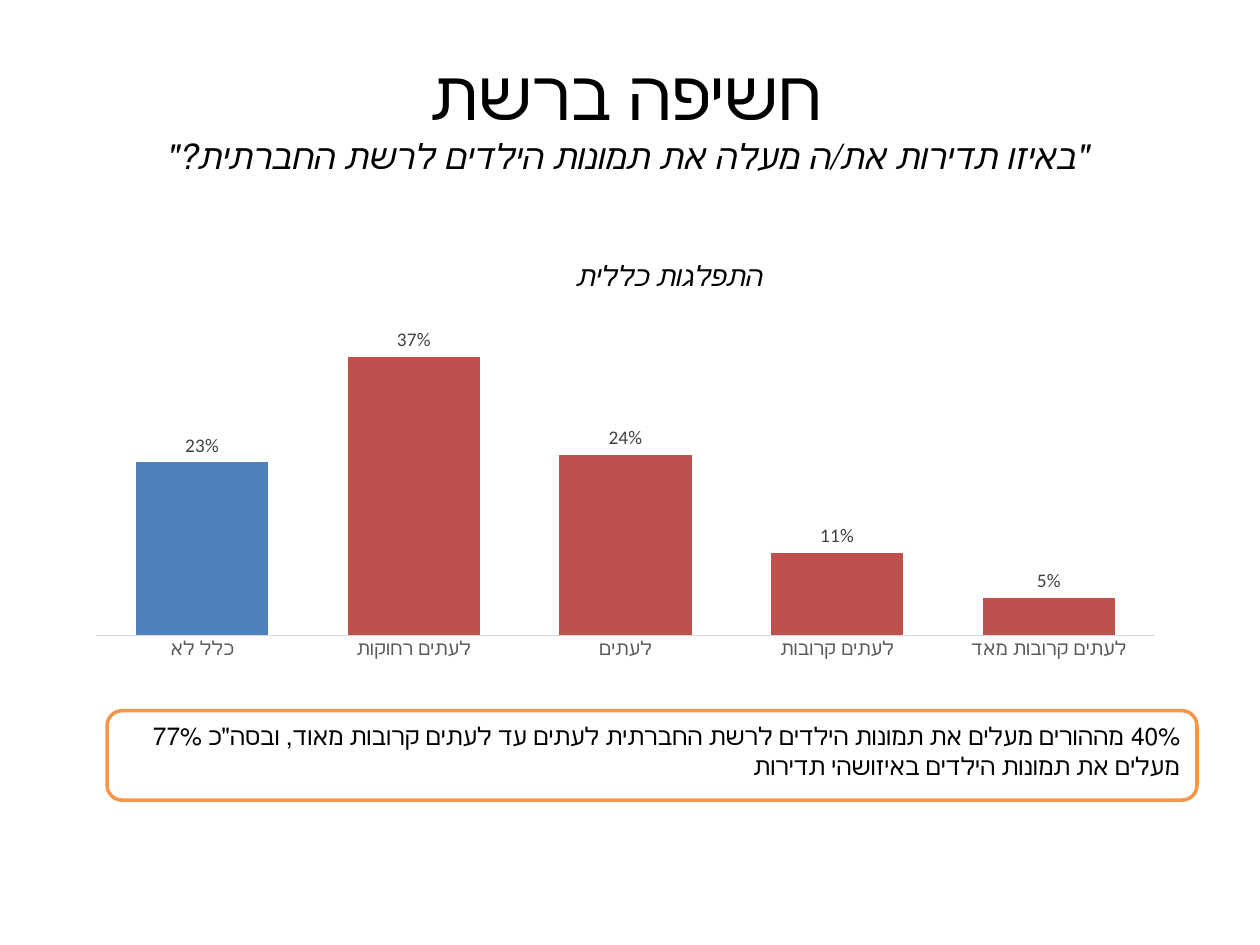
from lxml.etree import SubElement
from pptx import Presentation
from pptx.chart.data import CategoryChartData
from pptx.dml.color import RGBColor
from pptx.enum.chart import XL_CHART_TYPE, XL_LABEL_POSITION, XL_TICK_MARK
from pptx.enum.shapes import MSO_SHAPE
from pptx.enum.text import MSO_ANCHOR, PP_ALIGN
from pptx.oxml.ns import qn
from pptx.util import Inches, Pt

# Content
FONT = "Calibri"
HEADING = "חשיפה ברשת"
QUESTION = '"באיזו תדירות את/ה מעלה את תמונות הילדים לרשת החברתית?"'
CHART_TITLE = "התפלגות כללית"
FREQUENCIES = [
    ("כלל לא", 0.23, "4F81BD"),
    ("לעתים רחוקות", 0.37, "C0504D"),
    ("לעתים", 0.24, "C0504D"),
    ("לעתים קרובות", 0.11, "C0504D"),
    ("לעתים קרובות מאד", 0.05, "C0504D"),
]
SUMMARY = ('40% מההורים מעלים את תמונות הילדים לרשת החברתית לעתים עד לעתים קרובות מאוד, '
           'ובסה"כ 77% מעלים את תמונות הילדים באיזושהי תדירות')


def color(hex_value):
    return RGBColor.from_string(hex_value)


def style_font(font, size, hex_value="000000", italic=False):
    font.name, font.size = FONT, Pt(size)
    font.bold, font.italic = False, italic
    font.color.rgb = color(hex_value)


def add_run(p, text, size, italic=False):
    r = p.add_run()
    r.text = text
    style_font(r.font, size, italic=italic)


def set_rtl(p, align):
    p.alignment = align
    p._p.get_or_add_pPr().set("rtl", "1")


def set_layout(element, **values):
    """Place a chart part by fractions of the chart area."""
    layout = element.find(qn("c:layout"))
    if layout is None:
        layout = element.get_or_add_layout()
    manual = SubElement(layout, qn("c:manualLayout"))
    for tag, value in values.items():
        SubElement(manual, qn(f"c:{tag}")).set("val", str(value))


prs = Presentation()
prs.slide_width, prs.slide_height = Inches(10), Inches(7.5)
s = prs.slides.add_slide(prs.slide_layouts[6])

# Heading and survey question
sp = s.shapes.add_textbox(Inches(0.47), Inches(0.45), Inches(9), Inches(1.25))
tf = sp.text_frame
tf.word_wrap = True
tf.vertical_anchor = MSO_ANCHOR.MIDDLE
tf.margin_bottom = Inches(0.39)
p = tf.paragraphs[0]
set_rtl(p, PP_ALIGN.CENTER)
add_run(p, HEADING, 39.6)
p.add_line_break()
add_run(p, QUESTION, 19.8, italic=True)

# Column chart
data = CategoryChartData(number_format="###0%")
data.categories = [name for name, _, _ in FREQUENCIES]
data.add_series("Series 1", [value for _, value, _ in FREQUENCIES])
chart = s.shapes.add_chart(XL_CHART_TYPE.COLUMN_CLUSTERED, Inches(0.59), Inches(1.86),
                           Inches(8.75), Inches(3.46), data).chart
chart.has_legend = False
style_font(chart.font, 10)

chart.has_title = True
p = chart.chart_title.text_frame.paragraphs[0]
set_rtl(p, PP_ALIGN.CENTER)
add_run(p, CHART_TITLE, 16, italic=True)
chart.chart_title.include_in_layout = False
set_layout(chart.chart_title._element, xMode="edge", yMode="edge", x=0.45, y=0.05)

plot = chart.plots[0]
plot.gap_width, plot.overlap = 60, -12
plot.vary_by_categories = False
plot_area = chart._chartSpace.chart.plotArea
if plot_area.find(qn("c:layout")) is None:
    plot_area.insert(0, plot_area.makeelement(qn("c:layout")))
set_layout(plot_area, layoutTarget="inner", xMode="edge", yMode="edge",
           x=0.02, y=0.23, w=0.96, h=0.69)

axis = chart.category_axis
axis.major_tick_mark = axis.minor_tick_mark = XL_TICK_MARK.NONE
axis.format.line.color.rgb = color("D9D9D9")
axis.format.line.width = Pt(0.75)
style_font(axis.tick_labels.font, 11, "595959")
axis = chart.value_axis
axis.minimum_scale, axis.maximum_scale = 0, 0.4
axis.has_major_gridlines = False
axis.visible = False

series = plot.series[0]
series.format.fill.solid()
series.format.fill.fore_color.rgb = color(FREQUENCIES[0][2])
for i, (_, _, hex_value) in enumerate(FREQUENCIES):
    fill = series.points[i].format.fill
    fill.solid()
    fill.fore_color.rgb = color(hex_value)
labels = series.data_labels
labels.show_value = True
labels.position = XL_LABEL_POSITION.OUTSIDE_END
labels.number_format, labels.number_format_is_linked = "###0%", False
style_font(labels.font, 11, "404040")

# Summary box
sp = s.shapes.add_shape(MSO_SHAPE.ROUNDED_RECTANGLE, Inches(0.85), Inches(5.64),
                        Inches(8.65), Inches(0.71))
sp.shadow.inherit = False
sp.fill.solid()
sp.fill.fore_color.rgb = color("FFFFFF")
sp.line.color.rgb = color("F79646")
sp.line.width = Pt(2)
tf = sp.text_frame
tf.word_wrap = True
tf.vertical_anchor = MSO_ANCHOR.TOP
p = tf.paragraphs[0]
set_rtl(p, PP_ALIGN.RIGHT)
add_run(p, SUMMARY, 14)

prs.save("out.pptx")
